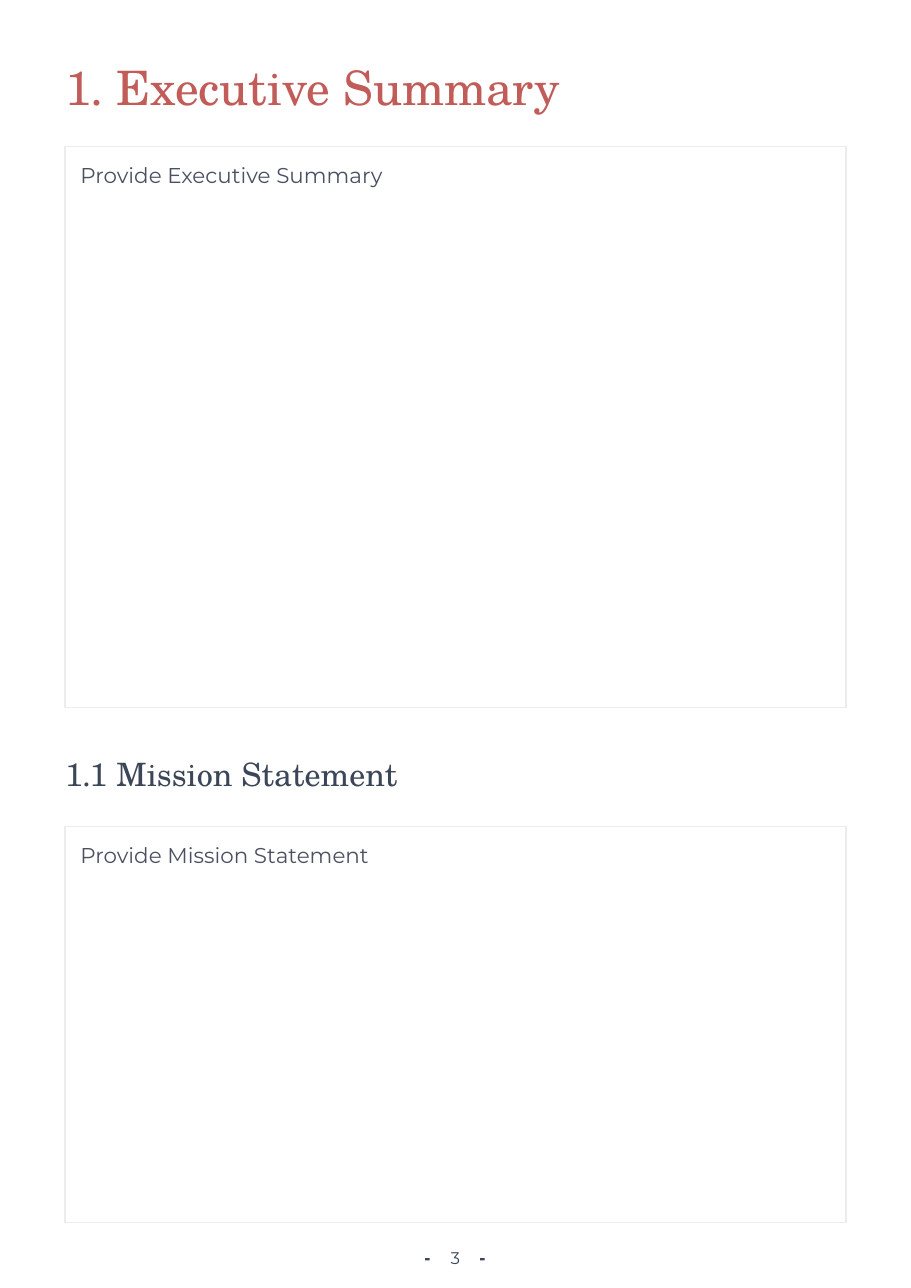
"""Build the executive summary page of a business plan."""
from dataclasses import dataclass

import pptx
import pptx.dml.color
import pptx.enum.shapes
import pptx.enum.text
import pptx.shapes.autoshape
import pptx.slide
import pptx.util

Inches = pptx.util.Inches
Pt = pptx.util.Pt
RGBColor = pptx.dml.color.RGBColor
Align = pptx.enum.text.PP_ALIGN
RECTANGLE = pptx.enum.shapes.MSO_SHAPE.RECTANGLE

CORAL = RGBColor(0xC1, 0x5C, 0x58)
NAVY = RGBColor(0x3B, 0x46, 0x58)
SLATE = RGBColor(0x4B, 0x51, 0x63)
PALE_GREY = RGBColor(0xEC, 0xEC, 0xEE)
SERIF = "TeX Gyre Schola"
SANS = "Montserrat"

PAGE_WIDTH, PAGE_HEIGHT = 8.27, 11.69
MARGIN = 0.59
CONTENT_WIDTH = PAGE_WIDTH - 2 * MARGIN
DASH_WIDTH, DASH_HEIGHT = 0.04, 0.02


@dataclass(frozen=True)
class Label:
    """A line of text without a frame."""
    text: str
    left: float
    top: float
    width: float
    height: float
    size: float
    font: str
    color: RGBColor
    align: Align = Align.LEFT


@dataclass(frozen=True)
class Field:
    """A framed area to be filled in."""
    prompt: str
    top: float
    height: float


LABELS = [
    Label("1. Executive Summary", MARGIN, 0.53, CONTENT_WIDTH, 0.52, 31, SERIF, CORAL),
    Label("1.1 Mission Statement", MARGIN, 6.85, CONTENT_WIDTH, 0.35, 21, SERIF, NAVY),
    Label("3", 3.96, 11.32, 0.35, 0.19, 11, SANS, NAVY, Align.CENTER),
]
FIELDS = [
    Field("Provide Executive Summary", 1.33, 5.09),
    Field("Provide Mission Statement", 7.5, 3.6),
]
DASH_LEFTS = [3.86, 4.36]


def write(shape: pptx.shapes.autoshape.Shape, text: str, size: float, font: str,
          color: RGBColor, align: Align, lead: float, trail: float) -> None:
    """Fill a shape with one top-anchored paragraph."""
    frame = shape.text_frame
    frame_format = {
        "word_wrap": True,
        "vertical_anchor": pptx.enum.text.MSO_ANCHOR.TOP,
        "margin_left": Inches(lead),
        "margin_top": Inches(lead),
        "margin_right": Inches(trail),
        "margin_bottom": Inches(trail),
    }
    for name, value in frame_format.items():
        setattr(frame, name, value)
    paragraph = frame.paragraphs[0]
    paragraph.alignment = align
    run = paragraph.add_run()
    run.text = text
    for name, value in {"name": font, "size": Pt(size)}.items():
        setattr(run.font, name, value)
    run.font.color.rgb = color


def add_label(slide: pptx.slide.Slide, label: Label) -> None:
    """Draw a line of text."""
    box = slide.shapes.add_textbox(Inches(label.left), Inches(label.top),
                                   Inches(label.width), Inches(label.height))
    write(box, label.text, label.size, label.font, label.color, label.align, 0, 0)


def add_rectangle(slide: pptx.slide.Slide, left: float, top: float,
                  width: float, height: float) -> pptx.shapes.autoshape.Shape:
    """Draw a rectangle without a shadow."""
    rectangle = slide.shapes.add_shape(RECTANGLE, Inches(left), Inches(top),
                                       Inches(width), Inches(height))
    rectangle.shadow.inherit = False
    return rectangle


def add_field(slide: pptx.slide.Slide, field: Field) -> None:
    """Draw a framed area with its prompt."""
    area = add_rectangle(slide, MARGIN, field.top, CONTENT_WIDTH, field.height)
    area.fill.background()
    area.line.color.rgb = PALE_GREY
    area.line.width = Pt(0.75)
    write(area, field.prompt, 14, SANS, SLATE, Align.LEFT, 0.14, 0.1)


def add_dash(slide: pptx.slide.Slide, left: float) -> None:
    """Draw a dash beside the page number."""
    dash = add_rectangle(slide, left, 11.42, DASH_WIDTH, DASH_HEIGHT)
    dash.fill.solid()
    dash.fill.fore_color.rgb = NAVY
    dash.line.fill.background()


def main() -> None:
    """Build and save the page."""
    plan = pptx.Presentation()
    plan.slide_width = Inches(PAGE_WIDTH)
    plan.slide_height = Inches(PAGE_HEIGHT)
    page = plan.slides.add_slide(plan.slide_layouts[6])
    for label in LABELS:
        add_label(page, label)
    for field in FIELDS:
        add_field(page, field)
    for left in DASH_LEFTS:
        add_dash(page, left)
    plan.save("out.pptx")


if __name__ == "__main__":
    main()
